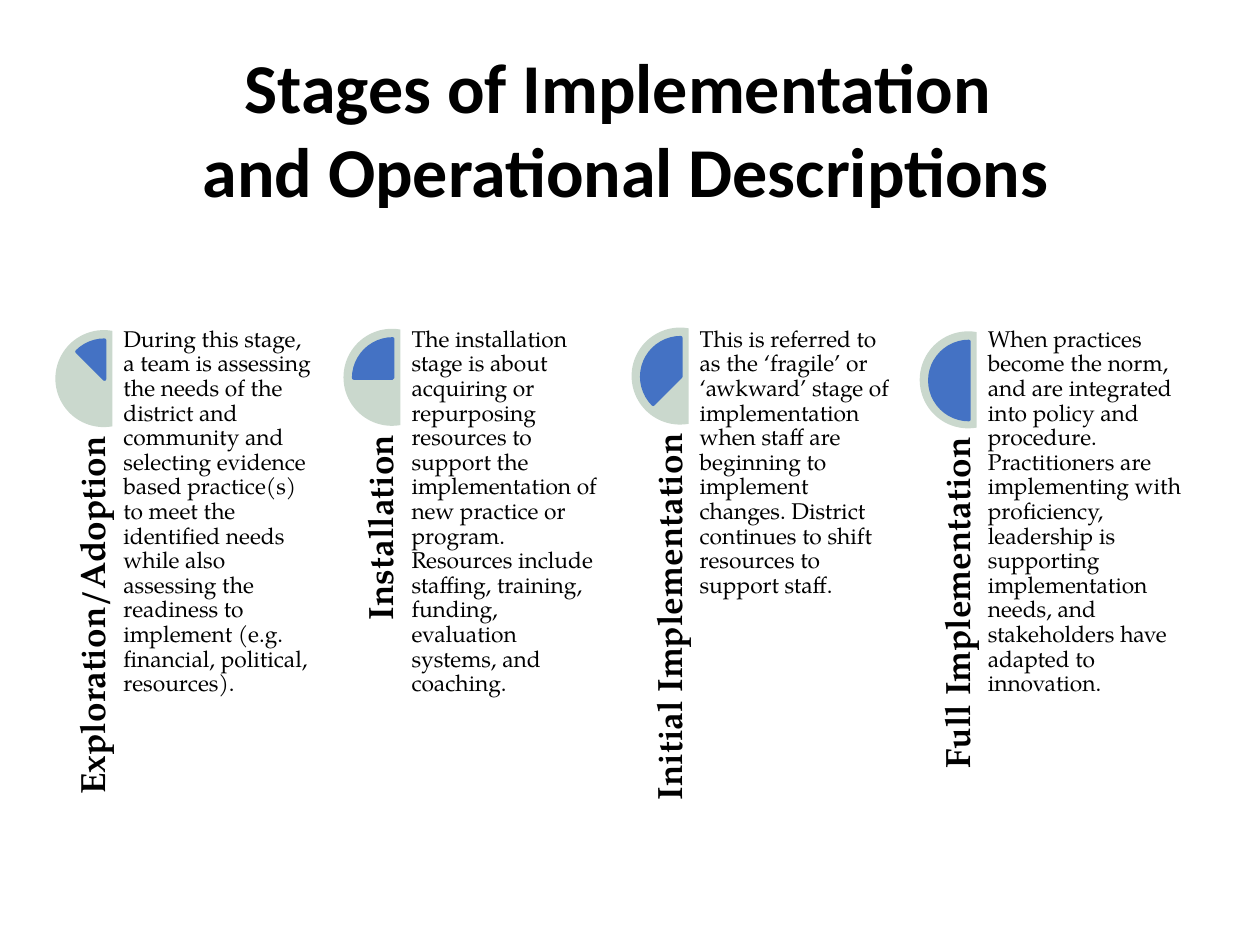
import dataclasses

import pptx
import pptx.dml.color
import pptx.enum.shapes
import pptx.enum.text
import pptx.util

Inches = pptx.util.Inches
Align = pptx.enum.text.PP_ALIGN
Anchor = pptx.enum.text.MSO_ANCHOR
Preset = pptx.enum.shapes.MSO_SHAPE


@dataclasses.dataclass(frozen=True)
class Theme:
    ink: str = "000000"
    disc: str = "CAD8CD"
    wedge: str = "4472C4"
    title_font: str = "Calibri"
    body_font: str = "TeX Gyre Pagella"
    title_size: int = 40
    label_size: int = 20
    body_size: int = 13
    wedge_line: int = 2


TITLE = "Stages of Implementation \vand Operational Descriptions"
STAGES = [
    ("Exploration/Adoption", 225, 2.62, 3.11,
     "During this stage, a team is assessing the needs of the district and community and "
     "selecting evidence based practice(s) to meet the identified needs while also assessing "
     "the readiness to implement (e.g. financial, political, resources)."),
    ("Installation", 180, 2.61, 2.24,
     "The installation stage is about acquiring or repurposing resources to support the "
     "implementation of new practice or program. Resources include staffing, training, "
     "funding, evaluation systems, and coaching."),
    ("Initial Implementation", 135, 2.6, 3.11,
     "This is referred to as the ‘fragile’ or ‘awkward’ stage of implementation when staff "
     "are beginning to implement changes. District continues to shift resources to support "
     "staff."),
    ("Full Implementation", 90, 2.63, 2.79,
     "When practices become the norm, and are integrated into policy and procedure. "
     "Practitioners are implementing with proficiency, leadership is supporting "
     "implementation needs, and stakeholders have adapted to innovation."),
]
FIRST_LEFT, LAST_LEFT = 0.44, 7.3
DISC_SIZE, WEDGE_SIZE, WEDGE_INSET = 0.77, 0.62, 0.08
LABEL_DROP, LABEL_HEIGHT, LABEL_CENTER = 0.84, 0.46, 0.23
BODY_OFFSET, BODY_TOP, BODY_WIDTH, BODY_HEIGHT = 0.54, 2.6, 1.54, 3.09


class StageSlide:
    def __init__(self, deck, theme):
        self.theme = theme
        self.page = deck.slides.add_slide(deck.slide_layouts[5])
        self.group = None

    def color(self, value):
        return pptx.dml.color.RGBColor.from_string(value)

    def apply(self, target, formats):
        for name, value in formats.items():
            setattr(target, name, value)

    def set_text(self, box, text, font, size, bold, align, anchor, insets, spacing):
        frame = box.text_frame
        frame.text = text
        across, down = (Inches(inset) for inset in insets)
        self.apply(frame, {
            "word_wrap": True,
            "auto_size": pptx.enum.text.MSO_AUTO_SIZE.NONE,
            "vertical_anchor": anchor,
            "margin_left": across, "margin_right": across,
            "margin_top": down, "margin_bottom": down,
        })
        para = frame.paragraphs[0]
        self.apply(para, {"alignment": align, "line_spacing": spacing})
        for span in para.runs:
            self.apply(span.font, {"name": font, "size": pptx.util.Pt(size), "bold": bold})
            span.font.color.rgb = self.color(self.theme.ink)

    def title(self, text, left, top, width, height):
        box = self.page.shapes.title
        self.apply(box, {"left": Inches(left), "top": Inches(top),
                         "width": Inches(width), "height": Inches(height)})
        self.set_text(box, text, self.theme.title_font, self.theme.title_size, True,
                      Align.CENTER, Anchor.MIDDLE, (0.1, 0.05), 1.0)

    def start_group(self):
        self.group = self.page.shapes.add_group_shape()

    def sector(self, preset, left, top, size, start, end, color, line_width=0):
        shape = self.group.shapes.add_shape(
            preset, Inches(left), Inches(top), Inches(size), Inches(size))
        for index, angle in enumerate((start, end)):
            shape.adjustments[index] = angle * 0.6
        shape.shadow.inherit = False
        shape.fill.solid()
        shape.fill.fore_color.rgb = self.color(color)
        if line_width:
            shape.line.color.rgb = self.color(color)
            shape.line.width = pptx.util.Pt(line_width)
        else:
            shape.line.fill.background()

    def label(self, text, center, top, length):
        box = self.group.shapes.add_textbox(
            Inches(center - length / 2), Inches(top + (length - LABEL_HEIGHT) / 2),
            Inches(length), Inches(LABEL_HEIGHT))
        box.rotation = 270
        self.set_text(box, text, self.theme.body_font, self.theme.label_size, True,
                      Align.RIGHT, Anchor.BOTTOM, (0, 0), 0.9)

    def body(self, text, left):
        box = self.group.shapes.add_textbox(
            Inches(left), Inches(BODY_TOP), Inches(BODY_WIDTH), Inches(BODY_HEIGHT))
        self.set_text(box, text, self.theme.body_font, self.theme.body_size, False,
                      Align.LEFT, Anchor.TOP, (0, 0), 0.9)

    def stage(self, left, name, wedge_start, disc_top, label_length, description):
        self.sector(Preset.CHORD, left, disc_top, DISC_SIZE, 80, 280, self.theme.disc)
        self.sector(Preset.PIE, left + WEDGE_INSET, disc_top + WEDGE_INSET, WEDGE_SIZE,
                    wedge_start, 270, self.theme.wedge, self.theme.wedge_line)
        self.label(name, left + LABEL_CENTER, disc_top + LABEL_DROP, label_length)
        self.body(description, left + BODY_OFFSET)


def main():
    deck = pptx.Presentation()
    deck.slide_width, deck.slide_height = Inches(10), Inches(7.5)
    slide = StageSlide(deck, Theme())
    slide.title(TITLE, 0.27, 0.29, 9.39, 1.45)
    slide.start_group()
    pitch = (LAST_LEFT - FIRST_LEFT) / (len(STAGES) - 1)
    for index, stage in enumerate(STAGES):
        slide.stage(FIRST_LEFT + index * pitch, *stage)
    deck.save("out.pptx")


if __name__ == "__main__":
    main()
